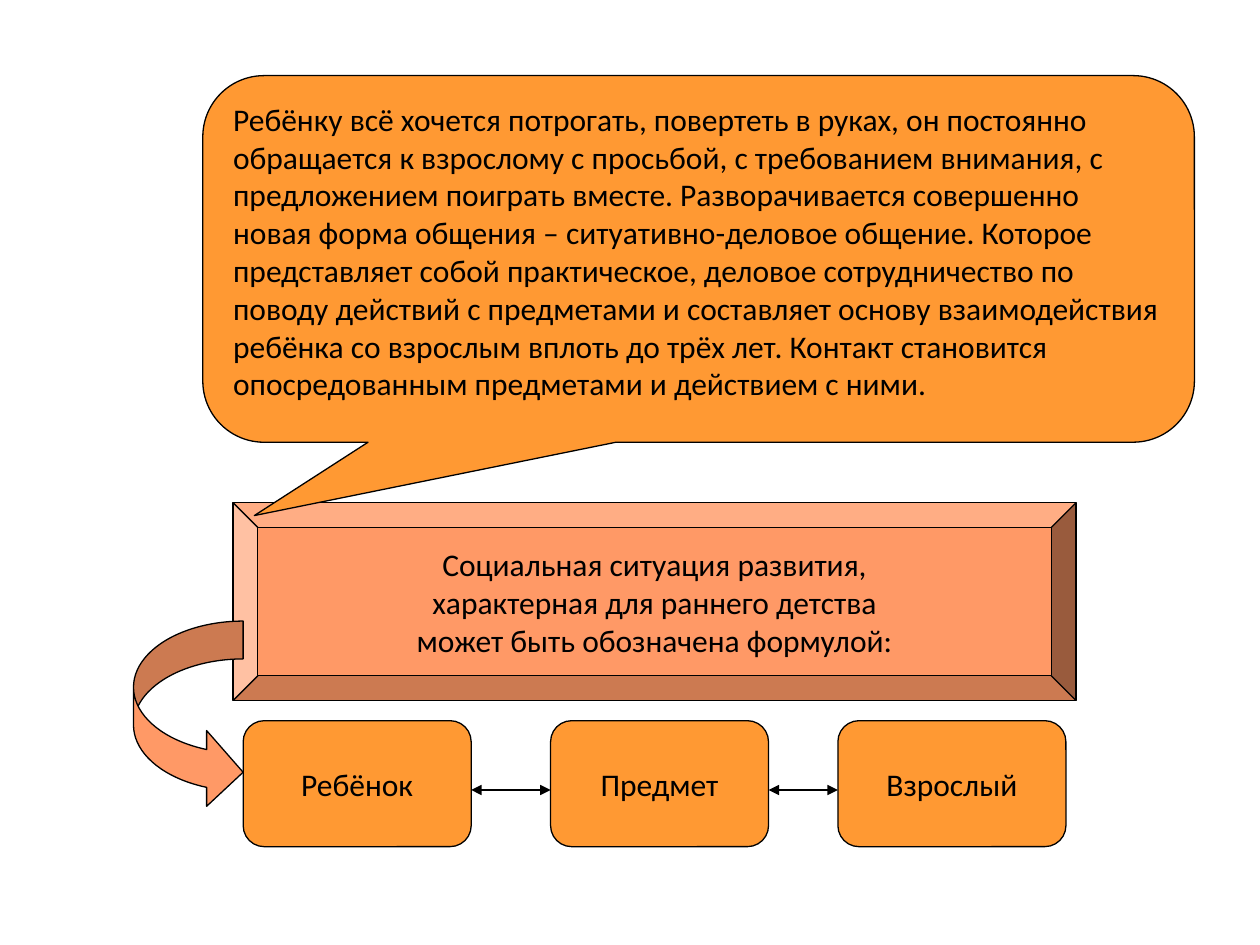
from lxml import etree
from pptx import Presentation
from pptx.dml.color import RGBColor
from pptx.enum.shapes import MSO_CONNECTOR, MSO_SHAPE
from pptx.enum.text import MSO_ANCHOR, PP_ALIGN
from pptx.oxml.ns import qn
from pptx.util import Inches, Pt

ROUNDED = MSO_SHAPE.ROUNDED_RECTANGLE
BEVEL = MSO_SHAPE.BEVEL
CALLOUT = MSO_SHAPE.ROUNDED_RECTANGULAR_CALLOUT
CURVED_ARROW = MSO_SHAPE.CURVED_RIGHT_ARROW
STRAIGHT = MSO_CONNECTOR.STRAIGHT
LEFT, CENTER = PP_ALIGN.LEFT, PP_ALIGN.CENTER
TOP, MIDDLE = MSO_ANCHOR.TOP, MSO_ANCHOR.MIDDLE

ORANGE, SALMON, BLACK = "FF9933", "FF9966", "000000"
LINE_WIDTH = 0.75
FORMULA_TOP, FORMULA_HEIGHT, ARROW_Y = 5.72, 1, 6.27
FORMULA = [("Ребёнок", 1.93, 1.81), ("Предмет", 4.37, 1.73), ("Взрослый", 6.65, 1.81)]
SITUATION = [
    "Социальная ситуация развития,",
    "характерная для раннего детства",
    "может быть обозначена формулой:",
]
EXPLANATION = (
    "Ребёнку всё хочется потрогать, повертеть в руках, он постоянно обращается "
    "к взрослому с просьбой, с требованием внимания, с предложением поиграть вместе. "
    "Разворачивается совершенно новая форма общения – ситуативно-деловое общение. "
    "Которое представляет собой практическое, деловое сотрудничество по поводу "
    "действий с предметами и составляет основу взаимодействия ребёнка со взрослым "
    "вплоть до трёх лет. Контакт становится опосредованным предметами и действием с ними."
)


def color(value):
    return RGBColor.from_string(value)


def style_line(line):
    line.color.rgb = color(BLACK)
    line.width = Pt(LINE_WIDTH)


def add_figure(slide, kind, box, fill, adjustments):
    shape = slide.shapes.add_shape(kind, *map(Inches, box))
    shape.shadow.inherit = False
    shape.fill.solid()
    shape.fill.fore_color.rgb = color(fill)
    style_line(shape.line)
    for index, value in enumerate(adjustments):
        shape.adjustments[index] = value
    return shape


def write_text(shape, lines, size=18, font="Calibri", align=CENTER, anchor=MIDDLE, wrap=False):
    frame = shape.text_frame
    frame.word_wrap = wrap
    frame.vertical_anchor = anchor
    for index, line in enumerate(lines):
        paragraph = frame.add_paragraph() if index else frame.paragraphs[0]
        paragraph.alignment = align
        run = paragraph.add_run()
        run.text = line
        run.font.size = Pt(size)
        run.font.name = font
        run.font.color.rgb = color(BLACK)


def add_double_arrow(slide, start, end, y):
    connector = slide.shapes.add_connector(STRAIGHT, *map(Inches, (start, y, end, y)))
    style_line(connector.line)
    properties = connector.line._get_or_add_ln()
    for tag in ("a:headEnd", "a:tailEnd"):
        etree.SubElement(properties, qn(tag), type="triangle")
    etree.SubElement(connector._element.spPr, qn("a:effectLst"))


def add_formula(slide):
    for name, left, width in FORMULA:
        box = (left, FORMULA_TOP, width, FORMULA_HEIGHT)
        write_text(add_figure(slide, ROUNDED, box, ORANGE, [0.167]), [name])
    for (_, left, width), (_, next_left, _) in zip(FORMULA, FORMULA[1:]):
        add_double_arrow(slide, left + width, next_left, ARROW_Y)


def main():
    presentation = Presentation()
    presentation.slide_width, presentation.slide_height = Inches(10), Inches(7.5)
    slide = presentation.slides.add_slide(presentation.slide_layouts[6])
    add_formula(slide)
    situation = add_figure(slide, BEVEL, (1.85, 3.99, 6.69, 1.57), SALMON, [0.125])
    write_text(situation, SITUATION)
    callout = add_figure(slide, CALLOUT, (1.61, 0.6, 7.87, 2.91), ORANGE, [-0.448, 0.7, 0.167])
    write_text(callout, [EXPLANATION], align=LEFT, anchor=TOP, wrap=True)
    add_figure(slide, CURVED_ARROW, (1.06, 4.93, 0.87, 1.5), SALMON, [0.345, 0.691, 0.333])
    presentation.save("out.pptx")


if __name__ == "__main__":
    main()
